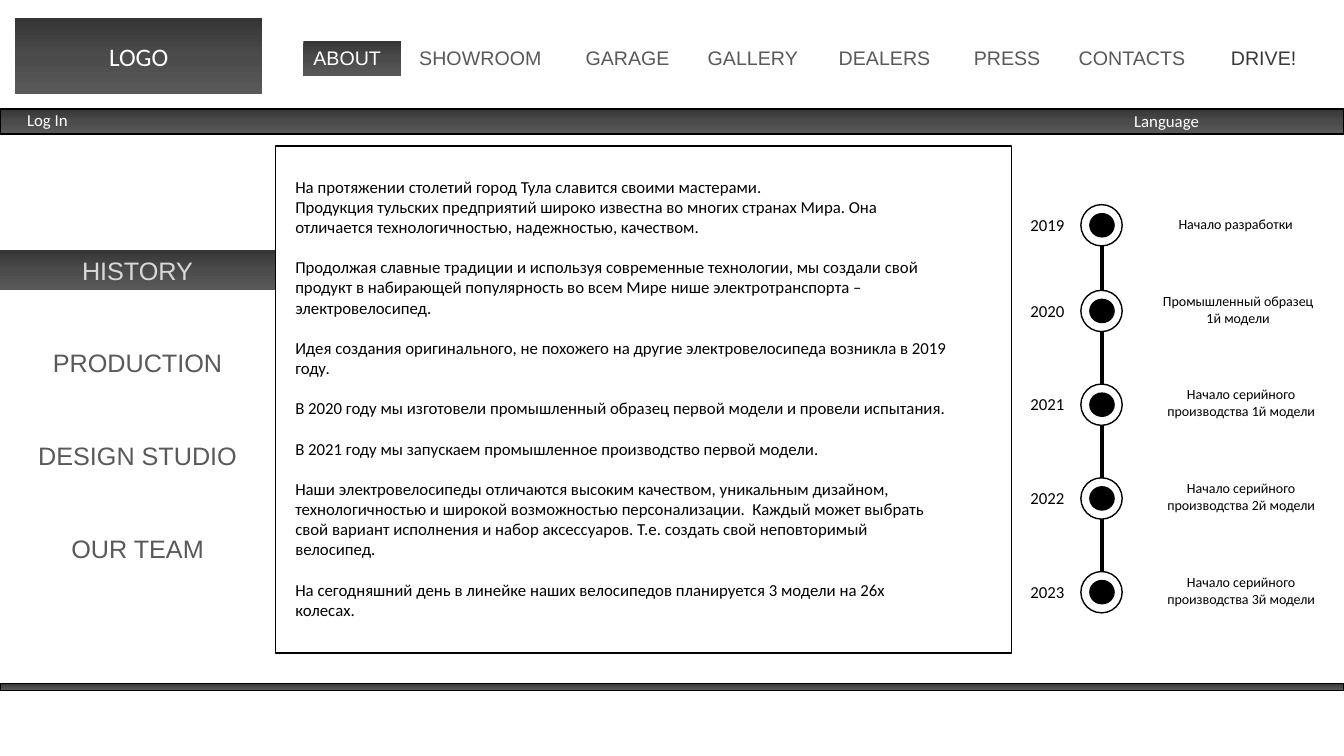
"""Build the company history page with its navigation, story and timeline."""
from copy import deepcopy
from dataclasses import dataclass
from itertools import pairwise

from lxml import etree
from pptx import Presentation
from pptx.dml.color import RGBColor
from pptx.enum.shapes import MSO_CONNECTOR, MSO_SHAPE
from pptx.enum.text import MSO_ANCHOR, MSO_AUTO_SIZE, PP_ALIGN
from pptx.oxml.ns import qn
from pptx.shapes.autoshape import Shape
from pptx.util import Inches, Pt

RECT, OVAL, DOT = MSO_SHAPE.RECTANGLE, MSO_SHAPE.OVAL, MSO_SHAPE.FLOWCHART_CONNECTOR
STRAIGHT = MSO_CONNECTOR.STRAIGHT
LEFT, CENTER = PP_ALIGN.LEFT, PP_ALIGN.CENTER
TOP, MIDDLE = MSO_ANCHOR.TOP, MSO_ANCHOR.MIDDLE
GROW, FIXED = MSO_AUTO_SIZE.SHAPE_TO_FIT_TEXT, MSO_AUTO_SIZE.NONE

COLORS = {
    "black": "000000",
    "white": "FFFFFF",
    "gray": "595959",
    "pale": "D9D9D9",
    "charcoal": "3B3838",
    "shade_top": "353535",
    "shade_mid": "4B4B4B",
}
PAGE_WIDTH, PAGE_HEIGHT = 13.33, 7.5
RING_SIZE, RING_LEFT, AXIS_X = 0.41, 10.72, 10.93


@dataclass(frozen=True)
class Box:
    left: float
    top: float
    width: float
    height: float


@dataclass(frozen=True)
class Label:
    lines: tuple[str, ...]
    box: Box
    size: float = 12
    font: str = "Calibri"
    color: str = "black"
    align: PP_ALIGN = LEFT
    wrap: bool = False
    shaded: bool = False
    anchor: MSO_ANCHOR = TOP
    fit: MSO_AUTO_SIZE = GROW
    gap_before: tuple[int, ...] = ()


@dataclass(frozen=True)
class Milestone:
    year: str
    ring_top: float
    caption: tuple[str, ...]
    caption_left: float
    caption_width: float = 1.7


STORY = (
    "На протяжении столетий город Тула славится своими мастерами.",
    "Продукция тульских предприятий широко известна во многих странах Мира. Она отличается технологичностью, надежностью, качеством.",
    "Продолжая славные традиции и используя современные технологии, мы создали свой",
    "продукт в набирающей популярность во всем Мире нише электротранспорта – электровелосипед.",
    "Идея создания оригинального, не похожего на другие электровелосипеда возникла в 2019 году.",
    "В 2020 году мы изготовели промышленный образец первой модели и провели испытания.",
    "В 2021 году мы запускаем промышленное производство первой модели.",
    "Наши электровелосипеды отличаются высоким качеством, уникальным дизайном, технологичностью и широкой возможностью персонализации.  Каждый может выбрать свой вариант исполнения и набор аксессуаров. Т.е. создать свой неповторимый велосипед.",
    "На сегодняшний день в линейке наших велосипедов планируется 3 модели на 26х колесах.",
)
STORY_GAPS = (2, 4, 5, 6, 7, 8)

MENU = (
    ("ABOUT", 3.01, 0.97, "white"),
    ("SHOWROOM", 4.06, 1.57, "gray"),
    ("GARAGE", 5.71, 1.13, "gray"),
    ("GALLERY", 6.92, 1.22, "gray"),
    ("DEALERS", 8.22, 1.27, "gray"),
    ("PRESS", 9.56, 0.97, "gray"),
    ("CONTACTS", 10.6, 1.4, "gray"),
    ("DRIVE!", 12.11, 0.96, "charcoal"),
)
SECTIONS = ("HISTORY", "PRODUCTION", "DESIGN STUDIO", "OUR TEAM")

SERIAL_START = "Начало серийного"
MILESTONES = (
    Milestone("2019", 2.03, ("Начало разработки",), 11.58, 1.35),
    Milestone("2020", 2.88, ("Промышленный образец", "1й модели"), 11.43),
    Milestone("2021", 3.81, (SERIAL_START, "производства 1й модели"), 11.46),
    Milestone("2022", 4.74, (SERIAL_START, "производства 2й модели"), 11.46),
    Milestone("2023", 5.67, (SERIAL_START, "производства 3й модели"), 11.46),
)


def rgb(name: str) -> RGBColor:
    return RGBColor.from_string(COLORS[name])


def inches(box: Box) -> tuple[Inches, ...]:
    return tuple(Inches(v) for v in (box.left, box.top, box.width, box.height))


def shade(shape: Shape) -> None:
    shape.fill.gradient()
    shape.fill.gradient_angle = 270
    first, last = shape.fill.gradient_stops
    first.position, last.position = 0, 1
    first.color.rgb, last.color.rgb = rgb("shade_top"), rgb("gray")
    stops = shape.element.spPr.find(qn("a:gradFill")).find(qn("a:gsLst"))
    stops.insert(1, deepcopy(stops[0]))
    middle = shape.fill.gradient_stops[1]
    middle.position, middle.color.rgb = 0.5, rgb("shade_mid")


def draw_shape(shapes, kind: MSO_SHAPE, box: Box, shaded: bool = False,
               solid: bool = False, outlined: bool = True) -> Shape:
    shape = shapes.add_shape(kind, *inches(box))
    shape.shadow.inherit = False
    if shaded:
        shade(shape)
    elif solid:
        shape.fill.solid()
        shape.fill.fore_color.rgb = rgb("black")
    else:
        shape.fill.background()
    if outlined:
        shape.line.color.rgb = rgb("black")
        shape.line.width = Pt(1)
    else:
        shape.line.fill.background()
    return shape


def draw_label(shapes, label: Label) -> None:
    if label.shaded:
        holder = draw_shape(shapes, RECT, label.box, shaded=True, outlined=False)
    else:
        holder = shapes.add_textbox(*inches(label.box))
    frame = holder.text_frame
    frame.word_wrap = label.wrap
    frame.auto_size = label.fit
    frame.vertical_anchor = label.anchor
    frame.text = "\n".join(label.lines)
    for index, paragraph in enumerate(frame.paragraphs):
        paragraph.alignment = label.align
        paragraph.font.size = Pt(label.size)
        paragraph.font.name = label.font
        paragraph.font.color.rgb = rgb(label.color)
        if index in label.gap_before:
            paragraph.space_before = Pt(14.4)


def draw_link(shapes, start: float, end: float) -> None:
    link = shapes.add_connector(
        STRAIGHT, Inches(AXIS_X), Inches(start), Inches(AXIS_X), Inches(end))
    link.line.color.rgb = rgb("black")
    link.line.width = Pt(3)
    etree.SubElement(link.element.spPr, qn("a:effectLst"))


def draw_milestone(shapes, stone: Milestone) -> None:
    top = stone.ring_top
    draw_shape(shapes, DOT, Box(10.81, top + 0.09, 0.24, 0.23), solid=True)
    draw_shape(shapes, OVAL, Box(RING_LEFT, top, RING_SIZE, RING_SIZE))
    draw_label(shapes, Label((stone.year,), Box(10.12, top + 0.05, 0.55, 0.3)))
    height = 0.1 + 0.17 * len(stone.caption)
    caption_box = Box(stone.caption_left, top + 0.18 - height / 2 + 0.01,
                      stone.caption_width, height)
    draw_label(shapes, Label(stone.caption, caption_box, size=10, align=CENTER))


def main() -> None:
    deck = Presentation()
    deck.slide_width, deck.slide_height = Inches(PAGE_WIDTH), Inches(PAGE_HEIGHT)
    shapes = deck.slides.add_slide(deck.slide_layouts[6]).shapes

    for top, height in ((1.08, 0.25), (6.78, 0.07)):
        draw_shape(shapes, RECT, Box(0, top, PAGE_WIDTH, height), shaded=True)
    draw_label(shapes, Label(("LOGO",), Box(0.15, 0.18, 2.45, 0.75), 18, color="white",
                             align=CENTER, wrap=True, shaded=True, anchor=MIDDLE, fit=FIXED))
    draw_label(shapes, Label(("Log In",), Box(0.17, 1.04, 0.61, 0.3), color="white"))
    draw_label(shapes, Label(("Language",), Box(11.15, 1.05, 0.85, 0.3), color="white"))

    for name, left, width, color in MENU:
        draw_label(shapes, Label((name,), Box(left, 0.41, width, 0.34), 14, "Arial", color,
                                 shaded=name == "ABOUT"))
    for row, name in enumerate(SECTIONS):
        active = name == "HISTORY"
        draw_label(shapes, Label((name,), Box(0, 2.48 + 0.92 * row, 2.73, 0.4), 18, "Arial",
                                 "pale" if active else "gray", CENTER, True, active))

    draw_shape(shapes, RECT, Box(2.73, 1.45, 7.3, 5.03))
    draw_label(shapes, Label(STORY, Box(2.83, 1.7, 6.68, 4.75), wrap=True,
                             gap_before=STORY_GAPS))

    for stone in MILESTONES:
        draw_milestone(shapes, stone)
    for upper, lower in pairwise(MILESTONES):
        draw_link(shapes, upper.ring_top + RING_SIZE, lower.ring_top)

    deck.save("out.pptx")


if __name__ == "__main__":
    main()
